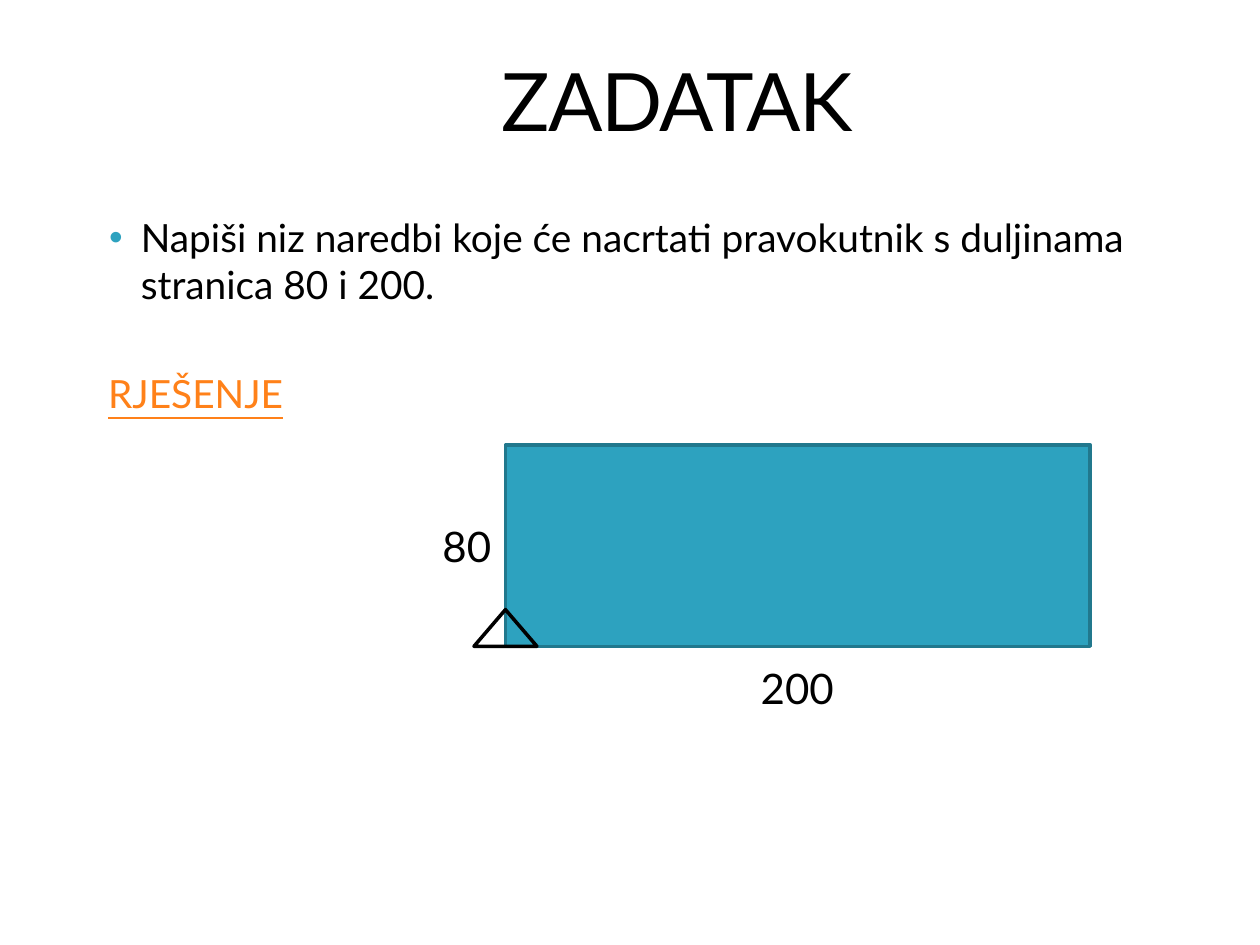
from lxml import etree
from pptx import Presentation
from pptx.dml.color import RGBColor
from pptx.enum.shapes import MSO_SHAPE
from pptx.enum.text import MSO_ANCHOR, PP_ALIGN
from pptx.oxml.ns import qn
from pptx.util import Cm, Pt

RECTANGLE = MSO_SHAPE.RECTANGLE
TRIANGLE = MSO_SHAPE.ISOSCELES_TRIANGLE
TOP, MIDDLE = MSO_ANCHOR.TOP, MSO_ANCHOR.MIDDLE
LEFT, CENTER = PP_ALIGN.LEFT, PP_ALIGN.CENTER

FONT = "Lato"
COLORS = {
    "text": "000000",
    "accent": "2DA2BF",
    "outline": "21788D",
    "link": "FF8119",
}


def color(key):
    return RGBColor.from_string(COLORS[key])


def add_text_frame(slide, left, top, width, height, anchor=TOP):
    box = slide.shapes.add_textbox(Cm(left), Cm(top), Cm(width), Cm(height))
    frame = box.text_frame
    frame.word_wrap = True
    frame.vertical_anchor = anchor
    return frame


def write(paragraph, text, size, ink="text", align=LEFT):
    paragraph.text = text
    paragraph.alignment = align
    paragraph.font.name = FONT
    paragraph.font.size = Pt(size)
    paragraph.font.color.rgb = color(ink)


def indent(paragraph, margin, first_line=0):
    properties = paragraph._p.get_or_add_pPr()
    properties.set("marL", str(Cm(margin)))
    properties.set("indent", str(Cm(first_line)))
    return properties


def add_bullet(properties, ink):
    bullet_color = etree.SubElement(properties, qn("a:buClr"))
    etree.SubElement(bullet_color, qn("a:srgbClr"), val=COLORS[ink])
    etree.SubElement(properties, qn("a:buFont"), typeface="Arial")
    etree.SubElement(properties, qn("a:buChar"), char="•")


def add_outlined(slide, kind, left, top, width, height, line, fill=None):
    shape = slide.shapes.add_shape(kind, Cm(left), Cm(top), Cm(width), Cm(height))
    shape.shadow.inherit = False
    if fill:
        shape.fill.solid()
        shape.fill.fore_color.rgb = color(fill)
    else:
        shape.fill.background()
    shape.line.color.rgb = color(line)
    shape.line.width = Pt(2)


def add_title(slide, left, top, width, height):
    title = add_text_frame(slide, left, top, width, height, MIDDLE).paragraphs[0]
    write(title, "ZADATAK", 46, align=CENTER)
    title.runs[0].font._element.set("spc", "-100")


def add_task(slide, left, top, width, height):
    frame = add_text_frame(slide, left, top, width, height)
    task = frame.paragraphs[0]
    write(task, "Napiši niz naredbi koje će nacrtati pravokutnik "
                "s duljinama stranica 80 i 200.", 22.2)
    add_bullet(indent(task, 0.96, -0.64), "accent")

    solution = frame.add_paragraph()
    write(solution, "RJEŠENJE", 22.2, "link")
    solution.font.underline = True
    solution.space_before = Pt(35.5)
    indent(solution, 0.3)


def add_drawing(slide, left, top, width, height):
    bottom = top + height
    add_outlined(slide, RECTANGLE, left, top, width, height, "outline", "accent")

    # Side lengths
    label_height = 1.27
    labels = (
        ("80", left - 1.52, top + (height - label_height) / 2, 1.6),
        ("200", left + width / 2 - 1, bottom + 0.2, 2.11),
    )
    for text, label_left, label_top, label_width in labels:
        frame = add_text_frame(slide, label_left, label_top, label_width, label_height)
        write(frame.paragraphs[0], text, 24)

    # Turtle at the starting corner
    turtle_width, turtle_height = 1.27, 0.74
    add_outlined(slide, TRIANGLE, left - turtle_width / 2, bottom - turtle_height,
                 turtle_width, turtle_height, "text")


def main():
    deck = Presentation()
    deck.slide_width, deck.slide_height = Cm(25.4), Cm(19.05)
    slide = deck.slides.add_slide(deck.slide_layouts[6])
    add_title(slide, 2.51, 0.91, 22.28, 2.18)
    add_task(slide, 1.63, 4.19, 22.2, 4.19)
    add_drawing(slide, 10.19, 8.97, 11.79, 4.06)
    deck.save("out.pptx")


if __name__ == "__main__":
    main()
